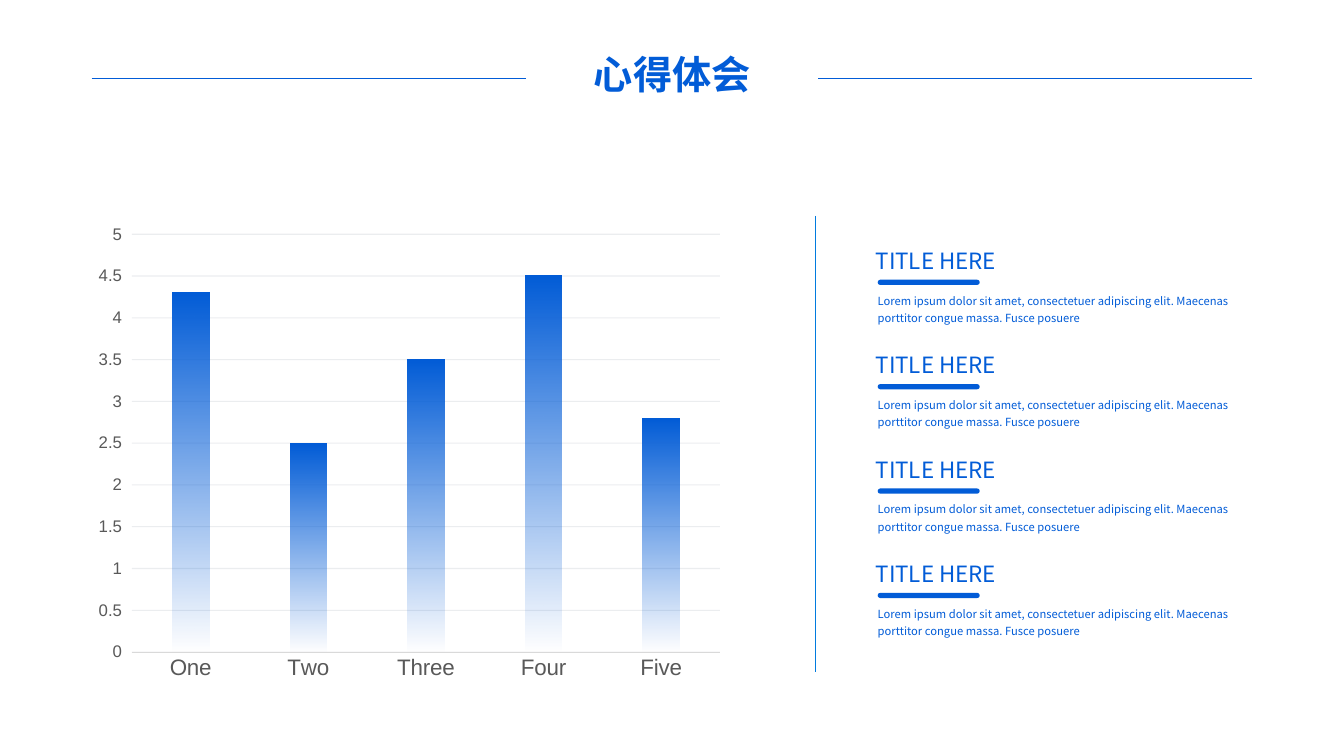
"""Build a slide with a gradient column chart and four captioned points."""
from lxml import etree
from pptx import Presentation
from pptx import util as u
from pptx.chart.data import CategoryChartData
from pptx.dml.color import RGBColor
from pptx.enum import chart as ch, shapes, text
from pptx.oxml.ns import qn

BLUE = "025CD7"
CAPTION = ("Lorem ipsum dolor sit amet, consectetuer adipiscing elit. "
           "Maecenas porttitor congue massa. Fusce posuere")
SCORES = {"One": 4.3, "Two": 2.5, "Three": 3.5, "Four": 4.5, "Five": 2.8}


def paint(colour, value):
    colour.rgb = RGBColor.from_string(value)


def apply(target, values):
    for name, value in values.items():
        setattr(target, name, value)


def fade(colour_element, percent):
    etree.SubElement(colour_element, qn("a:alpha")).set("val", str(percent * 1000))


class Deck:
    heading = {"size": u.Pt(28), "bold": True}
    point = {"size": u.Pt(16)}
    caption = {"size": u.Pt(8)}
    typeface = "Noto Sans CJK SC"

    def __init__(self):
        self.prs = Presentation()
        apply(self.prs, {"slide_width": u.Cm(33.87), "slide_height": u.Cm(19.05)})
        self.slide = self.prs.slides.add_slide(self.prs.slide_layouts[5])

    def fill_text(self, frame, words, font, paragraph):
        apply(frame, {"word_wrap": True,
                      "auto_size": text.MSO_AUTO_SIZE.SHAPE_TO_FIT_TEXT})
        line = frame.paragraphs[0]
        apply(line, paragraph)
        run = line.add_run()
        run.text = words
        apply(run.font, {"name": self.typeface, **font})
        paint(run.font.color, BLUE)
        east_asian = etree.SubElement(run._r.get_or_add_rPr(), qn("a:ea"))
        east_asian.set("typeface", self.typeface)

    def title(self, words, left, top, width, height):
        heading = self.slide.shapes.title
        apply(heading, {"left": u.Cm(left), "top": u.Cm(top),
                        "width": u.Cm(width), "height": u.Cm(height)})
        self.fill_text(heading.text_frame, words, self.heading,
                       {"alignment": text.PP_ALIGN.CENTER})

    def label(self, words, left, top, width, height, font, **paragraph):
        box = self.slide.shapes.add_textbox(*map(u.Cm, (left, top, width, height)))
        self.fill_text(box.text_frame, words, font, paragraph)

    def rule(self, x1, y1, x2, y2, colour=BLUE):
        line = self.slide.shapes.add_connector(
            shapes.MSO_CONNECTOR.STRAIGHT, *map(u.Cm, (x1, y1, x2, y2)))
        line.line.width = u.Pt(0.5)
        paint(line.line.color, colour)
        etree.SubElement(line._element.spPr, qn("a:effectLst"))

    def underline(self, left, top, width, height):
        bar = self.slide.shapes.add_shape(
            shapes.MSO_SHAPE.ROUNDED_RECTANGLE, *map(u.Cm, (left, top, width, height)))
        bar.adjustments[0] = 0.5
        bar.shadow.inherit = False
        bar.fill.solid()
        paint(bar.fill.fore_color, BLUE)
        bar.line.fill.background()

    def columns(self, scores, left, top, width, height):
        data = CategoryChartData()
        data.categories = list(scores)
        data.add_series("Series 1", list(scores.values()))
        chart = self.slide.shapes.add_chart(
            ch.XL_CHART_TYPE.COLUMN_CLUSTERED,
            *map(u.Cm, (left, top, width, height)), data).chart
        apply(chart, {"has_legend": False, "has_title": False})
        apply(chart.font, {"name": "Arial", "size": u.Pt(10)})
        paint(chart.font.color, "000000")
        apply(chart.plots[0], {"gap_width": 222, "vary_by_categories": False})

        series = chart.plots[0].series[0]
        fill = series.format.fill
        fill.gradient()
        fill.gradient_angle = 270
        for stop in fill.gradient_stops:
            paint(stop.color, BLUE)
        fade(list(series._element.iter(qn("a:srgbClr")))[-1], 0)

        names, values = chart.category_axis, chart.value_axis
        for axis, size in ((names, 16), (values, 12)):
            apply(axis.tick_labels.font, {"name": "Arial", "size": u.Pt(size)})
            paint(axis.tick_labels.font.color, "595959")
        apply(names, {"major_tick_mark": ch.XL_TICK_MARK.NONE,
                      "has_major_gridlines": False})
        names.format.line.width = u.Pt(0.75)
        paint(names.format.line.color, "D9D9D9")
        apply(values, {"minimum_scale": 0, "maximum_scale": 5, "major_unit": 0.5,
                       "major_tick_mark": ch.XL_TICK_MARK.OUTSIDE,
                       "has_major_gridlines": True})
        values.format.line.fill.background()
        grid = values.major_gridlines.format.line
        grid.width = u.Pt(0.75)
        paint(grid.color, "44546A")
        gridlines = values._element.find(qn("c:majorGridlines"))
        fade(next(gridlines.iter(qn("a:srgbClr"))), 10)


def main():
    deck = Deck()
    for start in (2.31, 20.62):
        deck.rule(start, 1.98, start + 10.94, 1.98)
    deck.title("心得体会", 13.31, 1.14, 7.26, 1.45)
    deck.columns(SCORES, 2.16, 5.44, 16.31, 11.94)
    deck.rule(20.55, 5.44, 20.55, 16.94, "017BDE")
    for row in range(4):
        top = 6.1 + row * 2.63
        deck.label("TITLE HERE", 21.82, top, 9.88, 0.94, deck.point)
        deck.label(CAPTION, 21.87, top + 1.08, 10.39, 1.12, deck.caption,
                   line_spacing=1.3)
        deck.underline(22.12, top + 0.95, 2.57, 0.13)
    deck.prs.save("out.pptx")


if __name__ == "__main__":
    main()
